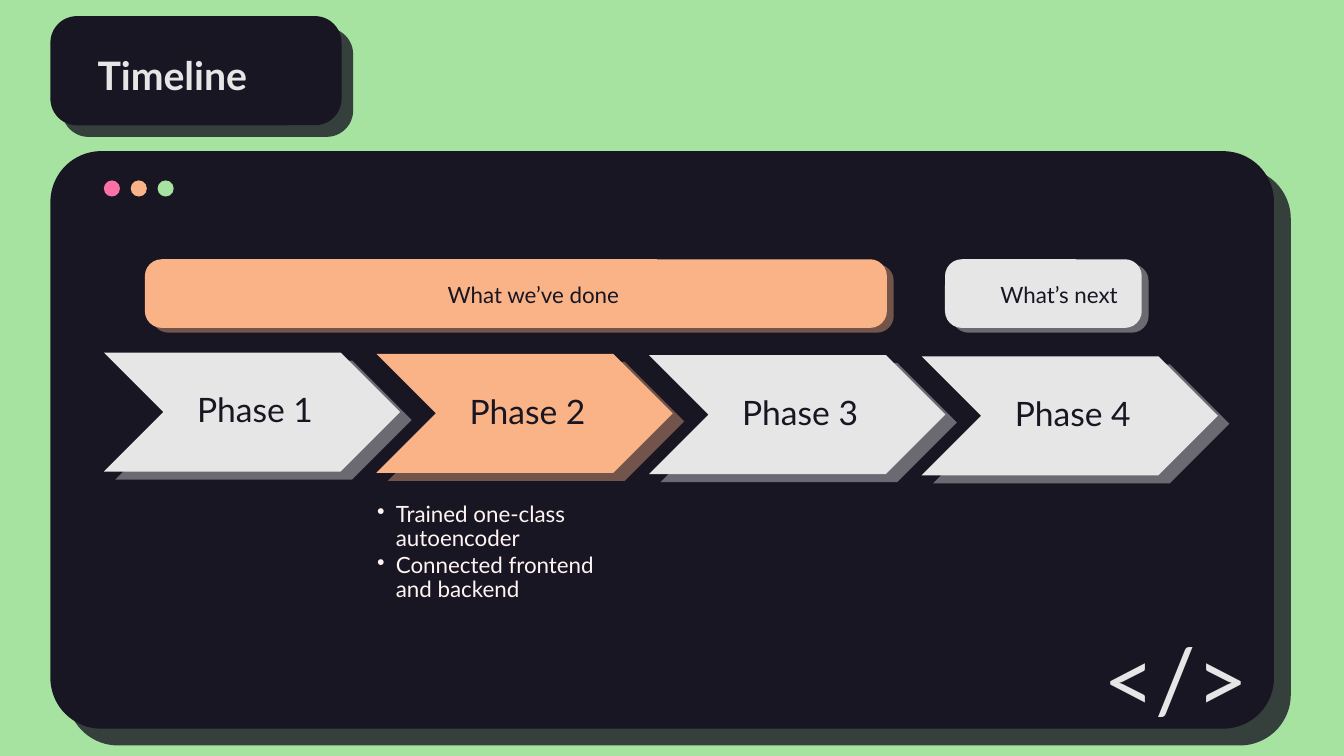
from lxml.etree import SubElement
from pptx import Presentation
from pptx.dml.color import RGBColor
from pptx.enum.shapes import MSO_SHAPE
from pptx.enum.text import MSO_ANCHOR, PP_ALIGN
from pptx.oxml.ns import qn
from pptx.util import Pt

FONT = "Lato"
DARK, LIGHT, GREEN = "191623", "E7E6E6", "A6E3A1"
ORANGE, PINK, CREAM = "FAB387", "FB71A6", "FFF4F2"

TITLE = "Timeline"
CODE_MARK = "</>"
DOTS = [PINK, ORANGE, GREEN]
PANELS = [
    ((36, 108, 874, 412.5), 0.088, 12),
    ((36, 11.5, 208, 78), 0.244, 8.3),
]
PHASES = [
    ("Phase 1", LIGHT, []),
    ("Phase 2", ORANGE, ["Trained one-class autoencoder", "Connected frontend and backend"]),
    ("Phase 3", LIGHT, []),
    ("Phase 4", LIGHT, []),
]
BANNERS = [
    ("What we’ve done", ORANGE, (103.5, 530), (287.3, 162)),
    ("What’s next", LIGHT, (675, 140.5), (679.5, 126)),
]

DOT_LEFT, DOT_TOP, DOT_SIZE, DOT_STEP = 74.2, 128.9, 11.5, 19.2
PHASE_LEFT, PHASE_TOP, PHASE_WIDTH, PHASE_HEIGHT = 74.2, 251.8, 211.7, 85
PHASE_STEP, PHASE_DROP, LABEL_INSET = 194.7, 0.9, 42.3
BANNER_TOP, BANNER_HEIGHT = 185.2, 49


def colour(value):
    return RGBColor.from_string(value)


def add_effect(parent, tag, **attributes):
    return SubElement(parent, qn(tag), {key: str(value) for key, value in attributes.items()})


def add_block(page, kind, place, fill, corner=None, alpha=None, shadow=None):
    block = page.shapes.add_shape(kind, *[Pt(value) for value in place])
    block.shadow.inherit = False
    block.fill.solid()
    block.fill.fore_color.rgb = colour(fill)
    block.line.fill.background()
    if corner is not None:
        block.adjustments[0] = corner
    properties = block.fill._xPr
    if alpha is not None:
        add_effect(properties.find(".//" + qn("a:srgbClr")), "a:alpha", val=alpha * 1000)
    if shadow is not None:
        cast = add_effect(properties.find(qn("a:effectLst")), "a:outerShdw", blurRad=0,
                          dist=Pt(shadow), dir=35 * 60000, algn="tl", rotWithShape=0)
        tint = add_effect(cast, "a:srgbClr", val=fill)
        add_effect(tint, "a:alpha", val=40000)


def add_text(page, place, lines, size, fill, align=PP_ALIGN.LEFT, bold=False,
             anchor=MSO_ANCHOR.TOP, insets=(7.2, 3.6, 7.2, 3.6), spacing=None, bullet=False):
    box = page.shapes.add_textbox(*[Pt(value) for value in place])
    frame = box.text_frame
    frame.word_wrap = True
    frame.vertical_anchor = anchor
    (frame.margin_left, frame.margin_top,
     frame.margin_right, frame.margin_bottom) = [Pt(value) for value in insets]
    for number, line in enumerate(lines):
        para = frame.add_paragraph() if number else frame.paragraphs[0]
        para.alignment = align
        if spacing:
            para.line_spacing = spacing
        if bullet:
            para.space_after = Pt(2)
            settings = para._p.get_or_add_pPr()
            settings.set("marL", str(Pt(13.5)))
            settings.set("indent", str(-Pt(13.5)))
            add_effect(settings, "a:buChar", char="•")
        span = para.add_run()
        span.text = line
        span.font.name = FONT
        span.font.size = Pt(size)
        span.font.bold = bold
        span.font.color.rgb = colour(fill)


def build():
    deck = Presentation()
    deck.slide_width, deck.slide_height = Pt(960), Pt(540)
    page = deck.slides.add_slide(deck.slide_layouts[6])
    page.background.fill.solid()
    page.background.fill.fore_color.rgb = colour(GREEN)

    for place, corner, offset in PANELS:
        left, top, width, height = place
        behind = (left + offset, top + offset, width, height)
        add_block(page, MSO_SHAPE.ROUNDED_RECTANGLE, behind, DARK, corner, alpha=80)
        add_block(page, MSO_SHAPE.ROUNDED_RECTANGLE, place, DARK, corner)
    add_text(page, (62.6, 33.1, 154.8, 41), [TITLE], 28, LIGHT, bold=True)

    for number, fill in enumerate(DOTS):
        place = (DOT_LEFT + number * DOT_STEP, DOT_TOP, DOT_SIZE, DOT_SIZE)
        add_block(page, MSO_SHAPE.OVAL, place, fill)
    add_text(page, (754.6, 442.1, 170.6, 85), [CODE_MARK], 64, LIGHT, PP_ALIGN.CENTER)

    for number, (name, fill, notes) in enumerate(PHASES):
        left = PHASE_LEFT + number * PHASE_STEP
        top = PHASE_TOP + number * PHASE_DROP
        add_block(page, MSO_SHAPE.CHEVRON, (left, top, PHASE_WIDTH, PHASE_HEIGHT), fill, shadow=10)
        label = (left + LABEL_INSET, top, PHASE_WIDTH - 2 * LABEL_INSET, PHASE_HEIGHT)
        add_text(page, label, [name], 24, DARK, PP_ALIGN.CENTER, anchor=MSO_ANCHOR.MIDDLE,
                 insets=(7.2, 2.9, 2.9, 2.9), spacing=0.9)
        if notes:
            add_text(page, (left + 0.4, top + 106.6, 169.2, 118), notes, 16, CREAM,
                     insets=(0, 0, 0, 0), spacing=0.9, bullet=True)

    for name, fill, (left, width), (text_left, text_width) in BANNERS:
        add_block(page, MSO_SHAPE.ROUNDED_RECTANGLE, (left, BANNER_TOP, width, BANNER_HEIGHT),
                  fill, 0.244, shadow=6)
        add_text(page, (text_left, BANNER_TOP + 12.1, text_width, 26.6), [name], 16, DARK,
                 PP_ALIGN.RIGHT)

    deck.save("out.pptx")


if __name__ == "__main__":
    build()
